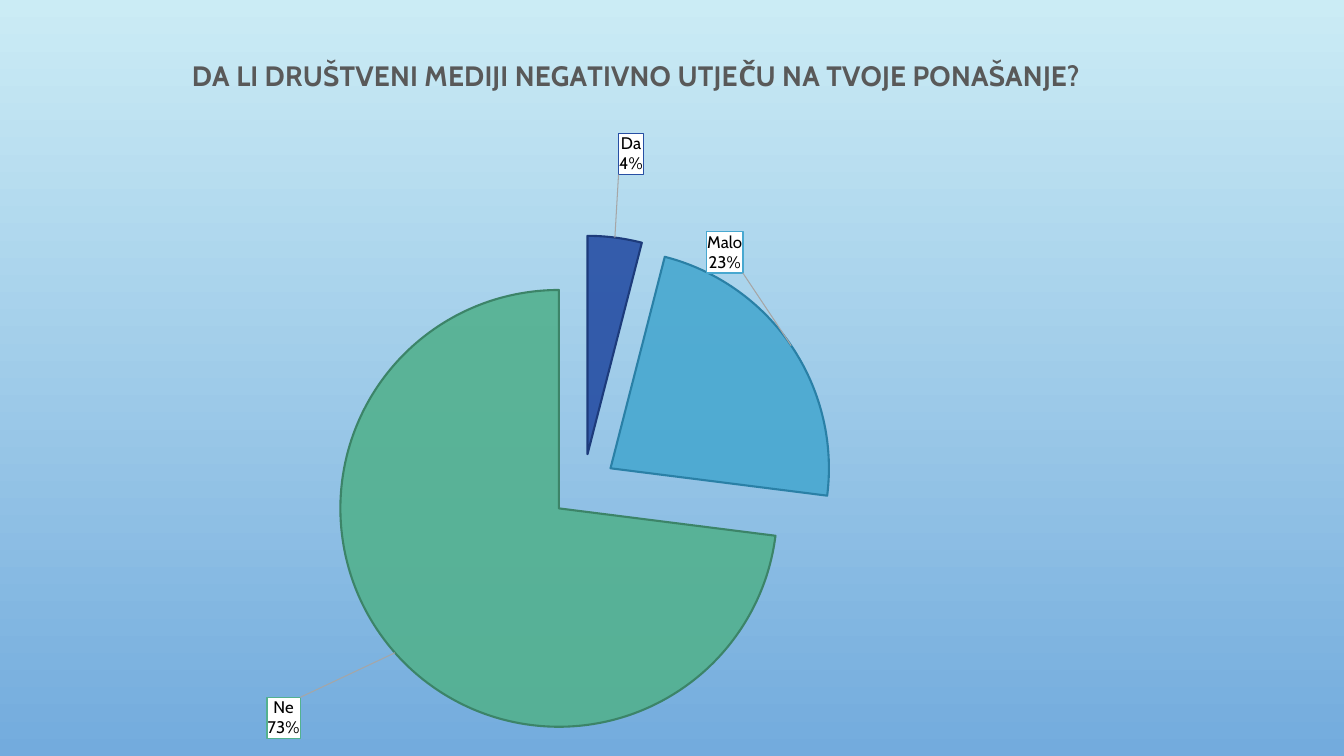
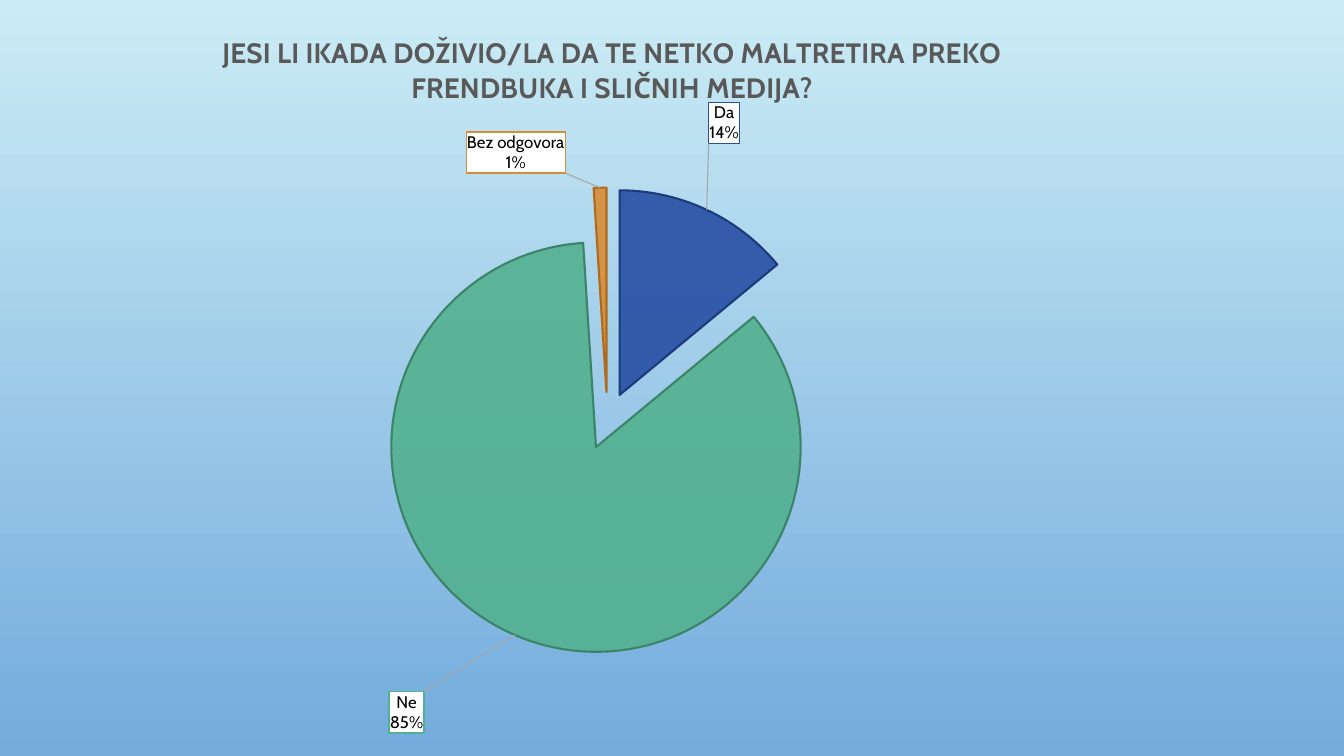
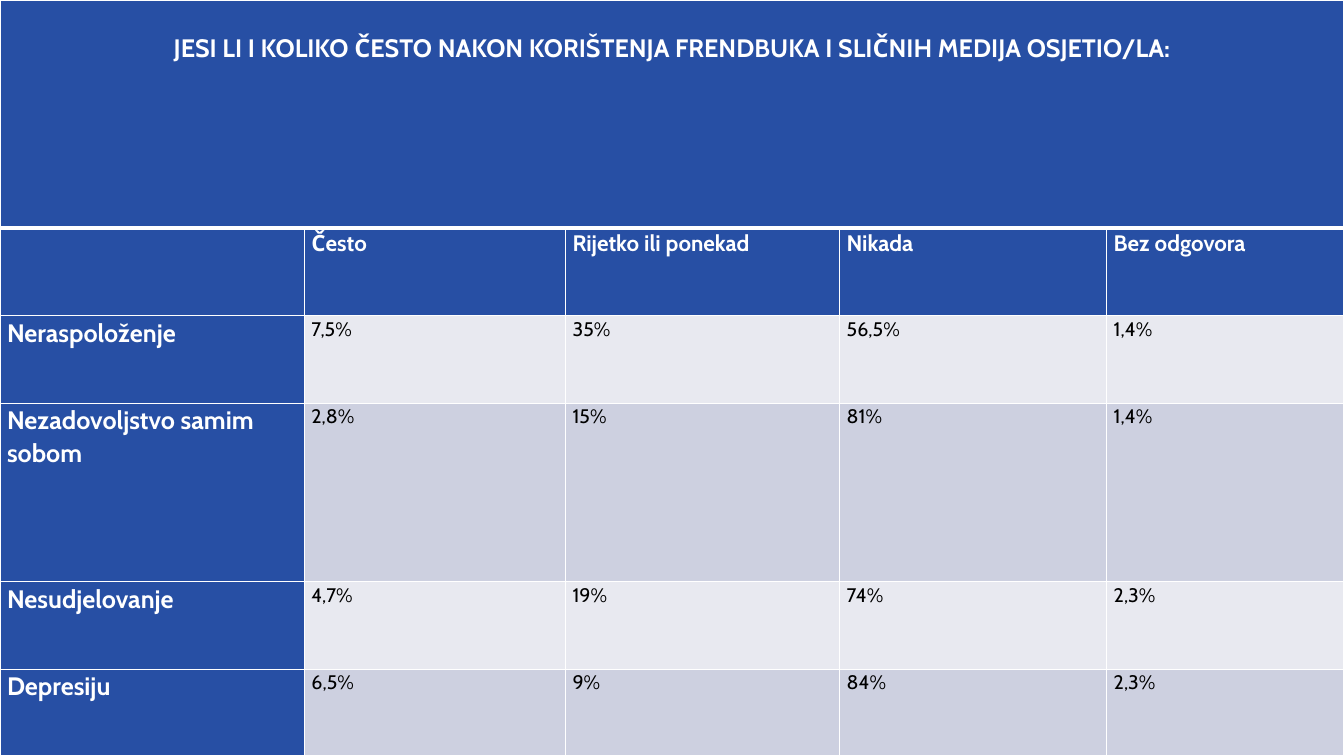
"""Builds three survey slides: two exploded pie charts and a table of answers."""
from dataclasses import dataclass
from typing import Optional

import pptx
import pptx.chart.data
import pptx.dml.color
import pptx.enum.chart
import pptx.enum.text
import pptx.oxml
import pptx.oxml.ns
import pptx.util


@dataclass(frozen=True)
class Theme:
    """Colours, fonts and type sizes of the deck."""
    font: str = "Cabin"
    sky: str = "CBECF5"
    sea: str = "73ABDD"
    ink: str = "000000"
    white: str = "FFFFFF"
    grey: str = "595959"
    leader: str = "A6A6A6"
    blue: str = "274FA4"
    bands: tuple = ("E8E9F0", "CDD0E0")
    slices: tuple = ("274FA4", "48A8D0", "53B18F", "D78D38")
    outlines: tuple = ("1D3B7B", "2A80A6", "3C8468", "AF6A1C")
    alpha: int = 90000
    chart_title: int = 20
    chart_text: int = 10
    label: int = 12
    heading: int = 18
    column: int = 16
    body: int = 14


@dataclass(frozen=True)
class Box:
    """Left, top, width and height as percentages of the area around it."""
    left: float
    top: float
    width: float
    height: float


@dataclass(frozen=True)
class Pie:
    """One pie chart; shifts move each label, in percent of the chart."""
    title: str
    box: Box
    title_at: tuple[float, float]
    plot: Box
    values: tuple[Optional[int], ...]
    explosion: int
    shifts: dict[int, tuple[float, float]]


T = Theme()
WIDTH, HEIGHT = pptx.util.Inches(13.33), pptx.util.Inches(7.5)
ANSWERS = ("Da", "Malo", "Ne", "Bez odgovora")
PIES = (
    Pie("DA LI DRUŠTVENI MEDIJI NEGATIVNO UTJEČU NA TVOJE PONAŠANJE?",
        Box(5, 5, 87.2, 92.8), (10.2, 1.8), Box(0, 28.2, 88.1, 71.6),
        (4, 23, 73, None), 15,
        {0: (2.5, -15.7), 1: (-3.7, -16.7), 2: (-11.3, 12.8)}),
    Pie("JESI LI IKADA DOŽIVIO/LA DA TE NETKO MALTRETIRA PREKO FRENDBUKA I SLIČNIH MEDIJA?",
        Box(7.5, 2, 85, 95.1), (10.2, 1.8), Box(4.5, 24, 79.7, 64.9),
        (14, None, 85, 1), 14,
        {0: (3.1, -15.7), 2: (-11.2, 14.4), 3: (-7.4, -8.6)}),
)
QUESTION = "JESI LI I KOLIKO ČESTO NAKON KORIŠTENJA FRENDBUKA I SLIČNIH MEDIJA OSJETIO/LA:"
ROWS = (
    (QUESTION, "", "", "", ""),
    ("", "Često", "Rijetko ili ponekad", "Nikada", "Bez odgovora"),
    ("Neraspoloženje", "7,5%", "35%", "56,5%", "1,4%"),
    ("Nezadovoljstvo samim sobom", "2,8%", "15%", "81%", "1,4%"),
    ("Nesudjelovanje", "4,7%", "19%", "74%", "2,3%"),
    ("Depresiju", "6,5%", "9%", "84%", "2,3%"),
)
COLUMN_SHARES = (22.65, 19.43, 20.4, 19.87, 17.65)
ROW_SHARES = (30.15, 11.6, 11.6, 23.6, 11.6, 11.45)


def rgb(color: str) -> pptx.dml.color.RGBColor:
    """Turn a hex string into a colour."""
    return pptx.dml.color.RGBColor.from_string(color)


def share(length: int, percent: float) -> pptx.util.Emu:
    """Return a percentage of a length."""
    return pptx.util.Emu(round(length * percent / 100))


def style(font, size: int, color: str, bold: bool = False) -> None:
    """Format a font in the deck's typeface."""
    font.name, font.size, font.bold = T.font, pptx.util.Pt(size), bold
    font.color.rgb = rgb(color)


def xml(source: str):
    """Parse a chart or drawing fragment."""
    return pptx.oxml.parse_xml(
        f"<c:root {pptx.oxml.ns.nsdecls('a', 'c')}>{source}</c:root>")[0]


def solid(color: str) -> str:
    """Return the XML of a solid fill."""
    return f'<a:solidFill><a:srgbClr val="{color}"/></a:solidFill>'


def layout(left: float, top: float, size: str = "", mode: str = "") -> str:
    """Return the XML of a manual chart layout."""
    return (f'<c:layout><c:manualLayout>{mode}<c:x val="{left / 100:.3f}"/>'
            f'<c:y val="{top / 100:.3f}"/>{size}</c:manualLayout></c:layout>')


def place(parent, index: int, source: str) -> None:
    """Replace the layout of a chart part."""
    for old in parent.findall(pptx.oxml.ns.qn("c:layout")):
        parent.remove(old)
    parent.insert(index, xml(source))


def label_xml(index: int, shift: tuple[float, float]) -> str:
    """Return the XML of one boxed slice label."""
    return (f'<c:dLbl><c:idx val="{index}"/>{layout(*shift)}'
            f'<c:spPr>{solid(T.white)}<a:ln w="12700">{solid(T.slices[index])}</a:ln></c:spPr>'
            f'<c:txPr><a:bodyPr/><a:p><a:pPr><a:defRPr sz="{T.label * 100}" b="0">'
            f'{solid(T.ink)}<a:latin typeface="{T.font}"/></a:defRPr></a:pPr></a:p></c:txPr>'
            '<c:dLblPos val="inEnd"/><c:showLegendKey val="0"/><c:showVal val="0"/>'
            '<c:showCatName val="1"/><c:showSerName val="0"/><c:showPercent val="1"/>'
            '<c:showBubbleSize val="0"/><c:separator>\n</c:separator></c:dLbl>')


def format_slices(series, pie: Pie) -> None:
    """Explode, colour and label the slices."""
    ser = series._element
    ser.find(pptx.oxml.ns.qn("c:tx")).addnext(xml(f'<c:explosion val="{pie.explosion}"/>'))
    for i, (fill, outline) in enumerate(zip(T.slices, T.outlines)):
        fmt = series.points[i].format
        fmt.fill.solid()
        fmt.fill.fore_color.rgb = rgb(fill)
        fmt.line.color.rgb = rgb(outline)
        fmt.line.width = pptx.util.Pt(1.5)
    for color in ser.xpath("c:dPt/c:spPr/a:solidFill/a:srgbClr"):
        color.append(xml(f'<a:alpha val="{T.alpha}"/>'))
    labels = series.data_labels
    labels.show_value = False
    labels.show_category_name = labels.show_percentage = True
    labels.position = pptx.enum.chart.XL_LABEL_POSITION.INSIDE_END
    style(labels.font, T.label, T.blue)
    for n, (i, shift) in enumerate(pie.shifts.items()):
        labels._element.insert(n, xml(label_xml(i, shift)))
    labels._element.find(pptx.oxml.ns.qn("c:showLeaderLines")).addnext(
        xml(f'<c:leaderLines><c:spPr><a:ln w="9525">{solid(T.leader)}</a:ln></c:spPr>'
            '</c:leaderLines>'))


def add_pie(s, pie: Pie) -> None:
    """Add a titled pie chart to a slide."""
    data = pptx.chart.data.CategoryChartData()
    data.categories = ANSWERS
    data.add_series("Series 1", pie.values)
    box = pie.box
    chart = s.shapes.add_chart(
        pptx.enum.chart.XL_CHART_TYPE.PIE, share(WIDTH, box.left), share(HEIGHT, box.top),
        share(WIDTH, box.width), share(HEIGHT, box.height), data).chart
    chart.has_legend = False
    style(chart.font, T.chart_text, T.ink)
    plot = chart.plots[0]
    plot.vary_by_categories = True
    format_slices(plot.series[0], pie)

    p = chart.chart_title.text_frame.paragraphs[0]
    p.text = pie.title
    style(p.font, T.chart_title, T.grey, True)
    chart.chart_title.include_in_layout = False
    edges = '<c:xMode val="edge"/><c:yMode val="edge"/>'
    place(chart.chart_title._element, 1, layout(*pie.title_at, mode=edges))
    size = f'<c:w val="{pie.plot.width / 100:.3f}"/><c:h val="{pie.plot.height / 100:.3f}"/>'
    area = chart._chartSpace.xpath("c:chart/c:plotArea")[0]
    place(area, 0, layout(pie.plot.left, pie.plot.top, size,
                          '<c:layoutTarget val="inner"/>' + edges))


def add_borders(cell, top: int, bottom: int) -> None:
    """Draw white lines round a cell, widths in points."""
    tc_pr = cell._tc.get_or_add_tcPr()
    for side, width in (("L", 1), ("R", 1), ("T", top), ("B", bottom)):
        tc_pr.append(xml(f'<a:ln{side} w="{pptx.util.Pt(width)}">{solid(T.white)}</a:ln{side}>'))


def format_cell(cell, text: str, row: int, col: int) -> None:
    """Fill one table cell and set its text by its place in the grid."""
    is_header = row < 2 or col == 0
    add_borders(cell, 3 if row == 1 else 1, 3 if row == 0 else 1)
    cell.fill.solid()
    cell.fill.fore_color.rgb = rgb(T.blue if is_header else T.bands[row % 2])
    cell.margin_left = cell.margin_right = pptx.util.Inches(0.07)
    cell.margin_top = pptx.util.Inches(0.31 if row == 0 else 0)
    cell.margin_bottom = 0
    if not text:
        return
    p = cell.text_frame.paragraphs[0]
    p.text = text
    p.line_spacing = 1.07
    if row == 0:
        p.alignment = pptx.enum.text.PP_ALIGN.CENTER
    size = T.heading if col == 0 else T.column if row == 1 else T.body
    style(p.font, size, T.white if is_header else T.ink, is_header)


def add_answers(s) -> None:
    """Add the full-slide table of answers."""
    table = s.shapes.add_table(len(ROWS), len(COLUMN_SHARES), 0, 0, WIDTH, HEIGHT).table
    table.horz_banding = False
    table.first_col = True
    for column, percent in zip(table.columns, COLUMN_SHARES):
        column.width = share(WIDTH, percent)
    for row, percent in zip(table.rows, ROW_SHARES):
        row.height = share(HEIGHT, percent)
    for r, texts in enumerate(ROWS):
        for c, text in enumerate(texts):
            format_cell(table.cell(r, c), text, r, c)
    table.cell(0, 0).merge(table.cell(0, len(COLUMN_SHARES) - 1))


def set_background(master) -> None:
    """Give every slide the vertical sky gradient."""
    fill = master.background.fill
    fill.gradient()
    fill.gradient_angle = 270
    for stop, color in zip(fill.gradient_stops, (T.sky, T.sea)):
        stop.color.rgb = rgb(color)


def main() -> None:
    """Build and save the deck."""
    prs = pptx.Presentation()
    prs.slide_width, prs.slide_height = WIDTH, HEIGHT
    set_background(prs.slide_master)
    blank = prs.slide_layouts.get_by_name("Blank")
    for pie in PIES:
        add_pie(prs.slides.add_slide(blank), pie)
    add_answers(prs.slides.add_slide(blank))
    prs.save("out.pptx")


if __name__ == "__main__":
    main()
